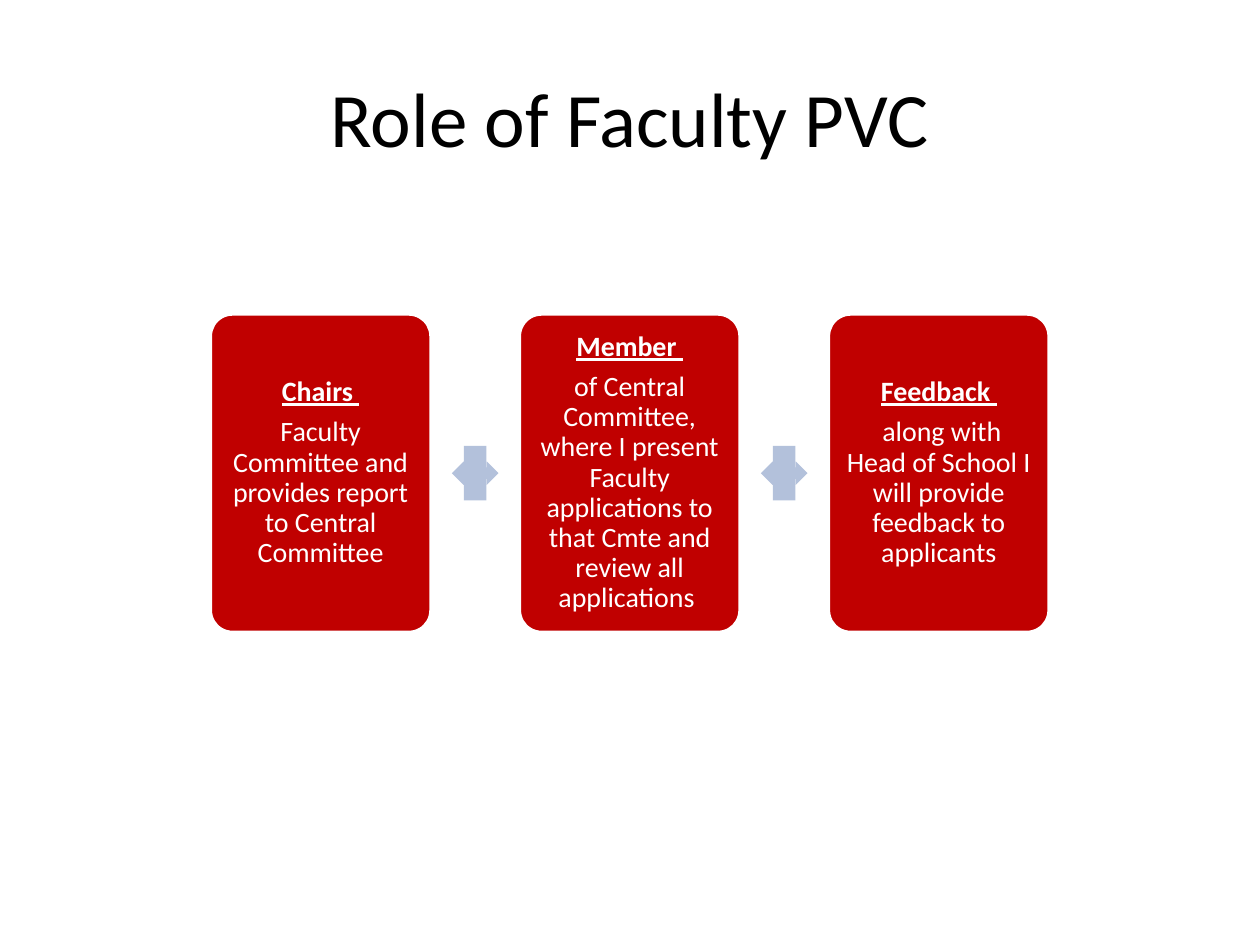
from pptx import Presentation
from pptx.dml.color import RGBColor
from pptx.enum.shapes import MSO_SHAPE
from pptx.enum.text import MSO_ANCHOR, PP_ALIGN
from pptx.util import Cm, Pt

CARD = MSO_SHAPE.ROUNDED_RECTANGLE
ARROW = MSO_SHAPE.LEFT_RIGHT_ARROW_CALLOUT
MIDDLE, CENTER = MSO_ANCHOR.MIDDLE, PP_ALIGN.CENTER
COLORS = {"card": "C00000", "arrow": "B3C1DB", "white": "FFFFFF", "black": "000000"}

ROLES = [
    ("Chairs ", "Faculty Committee and provides report to Central Committee"),
    ("Member ", "of Central Committee, where I present Faculty applications "
                "to that Cmte and review all applications "),
    ("Feedback ", " along with Head of School I will provide feedback to applicants"),
]
LEFT, TOP, CARD_W, CARD_H, PITCH = 4.24, 6.33, 4.45, 6.42, 6.23
ARROW_W, ARROW_H = 0.94, 1.1


class SlideBuilder:
    font = "Calibri"

    def __init__(self, slide):
        self.slide = slide

    def color(self, name):
        return RGBColor.from_string(COLORS[name])

    def paragraph(self, p, text, color, **formats):
        p.alignment = CENTER
        r = p.add_run()
        r.text = text
        r.font.name = self.font
        r.font.color.rgb = self.color(color)
        for name, value in formats.items():
            setattr(r.font, name, value)

    def frame(self, sp, **formats):
        tf = sp.text_frame
        tf.word_wrap = True
        tf.vertical_anchor = MIDDLE
        for name, value in formats.items():
            setattr(tf, name, value)
        return tf

    def shape(self, kind, x, y, w, h, fill):
        sp = self.slide.shapes.add_shape(kind, Cm(x), Cm(y), Cm(w), Cm(h))
        sp.shadow.inherit = False
        sp.fill.solid()
        sp.fill.fore_color.rgb = self.color(fill)
        sp.line.fill.background()
        return sp

    def title(self, text, x, y, w, h):
        sp = self.slide.shapes.add_textbox(Cm(x), Cm(y), Cm(w), Cm(h))
        self.paragraph(self.frame(sp).paragraphs[0], text, "black", size=Pt(44))

    def card(self, x, heading, body):
        sp = self.shape(CARD, x, TOP, CARD_W, CARD_H, "card")
        sp.adjustments[0] = 0.1
        sp.line.color.rgb = self.color("white")
        sp.line.width = Pt(2)
        sides = ("left", "top", "right", "bottom")
        tf = self.frame(sp, **{f"margin_{side}": Cm(0.18) for side in sides})
        paragraphs = [tf.paragraphs[0], tf.add_paragraph()]
        for p, text, strong in zip(paragraphs, (heading, body), (True, False)):
            p.line_spacing = 0.9
            p.space_after = Pt(5.6)
            self.paragraph(p, text, "white", size=Pt(16), bold=strong, underline=strong)

    def arrow(self, center_x, center_y):
        self.shape(ARROW, center_x - ARROW_W / 2, center_y - ARROW_H / 2,
                   ARROW_W, ARROW_H, "arrow")


def main():
    prs = Presentation()
    prs.slide_width, prs.slide_height = Cm(25.4), Cm(19.05)
    s = SlideBuilder(prs.slides.add_slide(prs.slide_layouts[6]))
    s.title("Role of Faculty PVC", 1.27, 0.76, 22.86, 3.18)
    for i, (heading, body) in enumerate(ROLES):
        x = LEFT + i * PITCH
        if i:
            s.arrow(x - (PITCH - CARD_W) / 2, TOP + CARD_H / 2)
        s.card(x, heading, body)
    prs.save("out.pptx")


if __name__ == "__main__":
    main()
